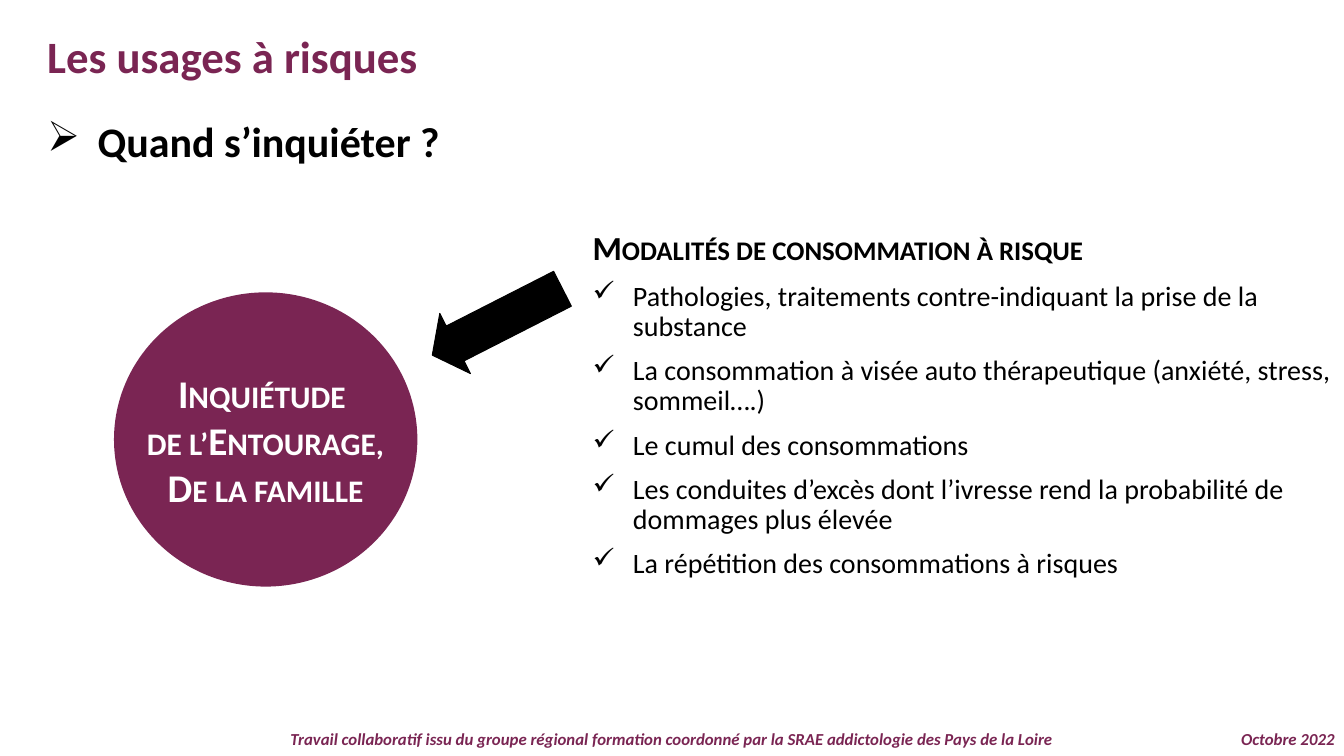
from lxml import etree
from pptx import Presentation
from pptx.dml.color import RGBColor
from pptx.enum import shapes, text
from pptx.oxml.ns import qn
from pptx.util import Pt

PLUM, BLACK, WHITE = "7A2553", "000000", "FFFFFF"
LEFT, CENTER, RIGHT = text.PP_ALIGN.LEFT, text.PP_ALIGN.CENTER, text.PP_ALIGN.RIGHT

# Content
FOOTER = ("Travail collaboratif issu du groupe régional formation coordonné "
          "par la SRAE addictologie des Pays de la Loire")
DATE = "Octobre 2022"
TITLE = "Les usages à risques"
QUESTION = "Quand s’inquiéter ?"
HEADING = "Modalités de consommation à risque"
RISKS = [
    "Pathologies, traitements contre-indiquant la prise de la substance",
    "La consommation à visée auto thérapeutique (anxiété, stress, sommeil….)",
    "Le cumul des consommations",
    "Les conduites d’excès dont l’ivresse rend la probabilité de dommages plus élevée",
    "La répétition des consommations à risques",
]
CONCERN = ["Inquiétude \vde l’Entourage,", "De la famille"]

# Text formats
FOOTER_STYLE = dict(size=12, bold=True, italic=True, color=PLUM)
TITLE_STYLE = dict(size=32, bold=True, color=PLUM)
QUESTION_STYLE = dict(size=30, bold=True, color=BLACK)
HEADING_STYLE = dict(size=24, bold=True, color=BLACK, small_caps=True)
RISK_STYLE = dict(size=20, bold=False, color=BLACK)
CONCERN_STYLE = dict(size=28, bold=True, color=WHITE, small_caps=True)

# Text boxes: position and size, alignment, line spacing,
# then paragraphs as (text, format, bullet, hanging indent)
TEXT_BOXES = [
    ((0, 518.4, 960, 21.6), CENTER, 0.9, [(FOOTER, FOOTER_STYLE, None, 0)]),
    ((856, 518.4, 104.4, 21.6), RIGHT, 0.9, [(DATE, FOOTER_STYLE, None, 0)]),
    ((26.6, 17.3, 933.8, 46), LEFT, 1.0, [(TITLE, TITLE_STYLE, None, 0)]),
    ((26.6, 82.8, 824.4, 46), LEFT, 0.9, [(QUESTION, QUESTION_STYLE, "➢", 36)]),
    ((416.2, 162, 543.6, 308.2), LEFT, 0.9,
     [(HEADING, HEADING_STYLE, None, 0)]
     + [(risk, RISK_STYLE, "✓", 28.8) for risk in RISKS]),
]
CIRCLE = (81.4, 208.8, 216.7, 210.2)
ARROW = (303.1, 205.9, 104.4, 48.2)


def color(hex_value):
    return RGBColor.from_string(hex_value)


def format_runs(paragraph, style):
    for run in paragraph.runs:
        values = dict(name="Calibri", size=Pt(style["size"]),
                      bold=style["bold"], italic=style.get("italic", False))
        for name, value in values.items():
            setattr(run.font, name, value)
        run.font.color.rgb = color(style["color"])
        if style.get("small_caps"):
            run.font._element.set("cap", "small")


def write(frame, paragraphs, alignment, line_spacing, space_before):
    for index, (words, style, bullet, indent) in enumerate(paragraphs):
        paragraph = frame.add_paragraph() if index else frame.paragraphs[0]
        paragraph.text = words
        if bullet:
            properties = paragraph._p.get_or_add_pPr()
            properties.set("marL", str(Pt(indent)))
            properties.set("indent", str(-Pt(indent)))
            etree.SubElement(properties, qn("a:buChar"), char=bullet)
        values = dict(alignment=alignment, line_spacing=line_spacing,
                      space_before=Pt(space_before if index else 0))
        for name, value in values.items():
            setattr(paragraph, name, value)
        format_runs(paragraph, style)


def add_solid(slide, kind, box, fill):
    shape = slide.shapes.add_shape(kind, *map(Pt, box))
    shape.shadow.inherit = False
    shape.fill.solid()
    shape.fill.fore_color.rgb = color(fill)
    return shape


def main():
    presentation = Presentation()
    presentation.slide_width, presentation.slide_height = Pt(960), Pt(540)
    slide = presentation.slides.add_slide(presentation.slide_layouts[6])

    # Footer, title, question and list
    for box, alignment, line_spacing, paragraphs in TEXT_BOXES:
        frame = slide.shapes.add_textbox(*map(Pt, box)).text_frame
        frame.word_wrap = True
        write(frame, paragraphs, alignment, line_spacing, 10)

    # Circle
    circle = add_solid(slide, shapes.MSO_SHAPE.OVAL, CIRCLE, PLUM)
    circle.line.fill.background()
    circle.text_frame.word_wrap = False
    circle.text_frame.vertical_anchor = text.MSO_ANCHOR.MIDDLE
    write(circle.text_frame, [(words, CONCERN_STYLE, None, 0) for words in CONCERN],
          CENTER, 1.0, 0)

    # Arrow from the list to the circle
    arrow = add_solid(slide, shapes.MSO_SHAPE.LEFT_ARROW, ARROW, BLACK)
    arrow.rotation = 333
    arrow.adjustments[0], arrow.adjustments[1] = 0.58, 0.38
    arrow.line.color.rgb = color(BLACK)
    arrow.line.width = Pt(0.75)

    presentation.save("out.pptx")


if __name__ == "__main__":
    main()
